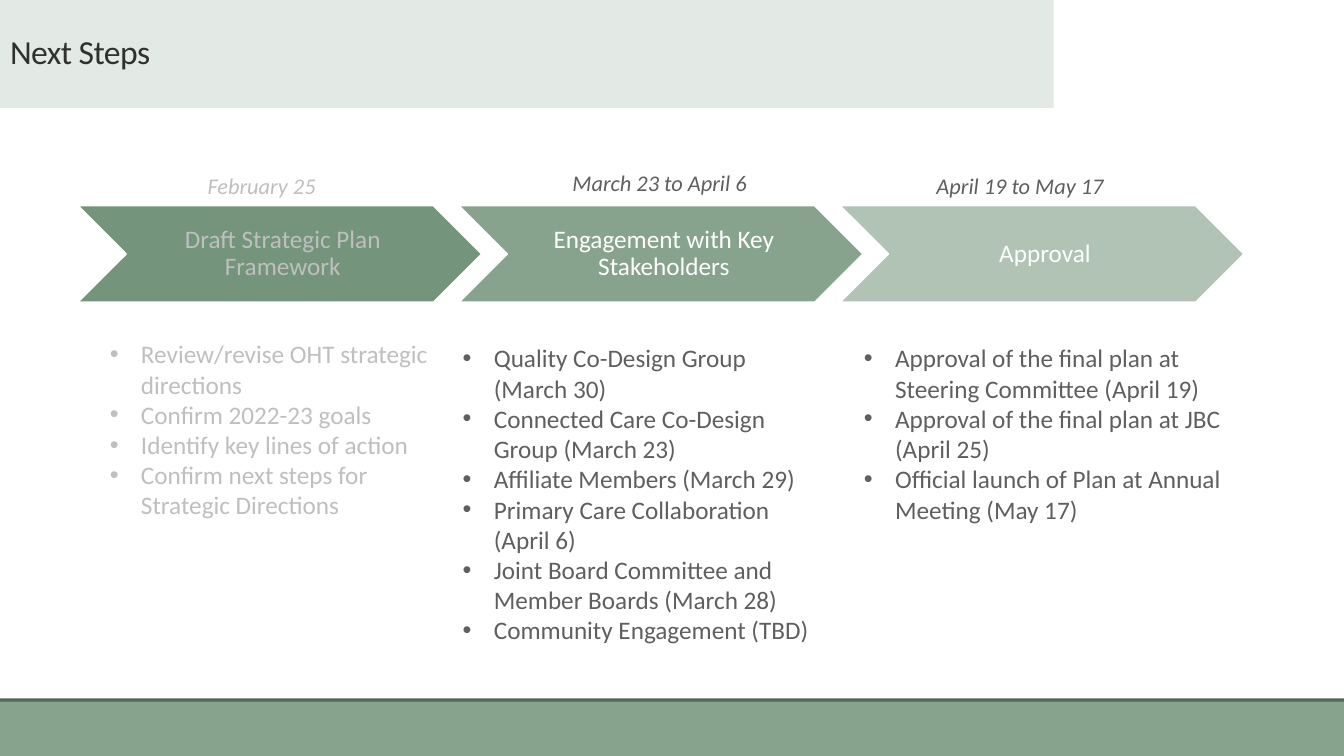
from dataclasses import dataclass

import pptx
import pptx.dml.color
import pptx.enum.shapes
import pptx.enum.text
import pptx.oxml
import pptx.oxml.ns
import pptx.util

Inches = pptx.util.Inches
Pt = pptx.util.Pt
PP_ALIGN = pptx.enum.text.PP_ALIGN
ANCHOR = pptx.enum.text.MSO_ANCHOR
SHAPE = pptx.enum.shapes.MSO_SHAPE

FONT = "Calibri"
WHITE, MUTED, GREY = "FFFFFF", "BFBFBF", "5F5F5F"
CHEVRON_LEFT, CHEVRON_STEP, CHEVRON_TOP = 0.77, 3.78, 2.04
CHEVRON_W, CHEVRON_H = 4.01, 0.96


@dataclass
class Box:
    left: float
    top: float
    width: float
    height: float

    def lengths(self) -> tuple:
        return tuple(Inches(v) for v in (self.left, self.top, self.width, self.height))


@dataclass
class Band:
    box: Box
    fill: str


@dataclass
class Step:
    label: str
    label_color: str
    fill: str
    date: str
    date_box: Box
    tasks: list[str]
    tasks_box: Box
    text_color: str


BANDS = [
    Band(Box(0, 6.93, 13.33, 0.07), "506855"),
    Band(Box(0, 6.96, 13.33, 0.54), "87A38D"),
]

STEPS = [
    Step("Draft Strategic Plan Framework", MUTED, "74947B",
         "February 25", Box(1.96, 1.66, 2.42, 0.37),
         ["Review/revise OHT strategic directions",
          "Confirm 2022-23 goals",
          "Identify key lines of action",
          "Confirm next steps for Strategic Directions"],
         Box(0.99, 3.31, 3.39, 1.92), MUTED),
    Step("Engagement with Key Stakeholders", WHITE, "87A38D",
         "March 23 to April 6", Box(5.58, 1.63, 3.16, 0.37),
         ["Quality Co-Design Group (March 30)",
          "Connected Care Co-Design Group (March 23)",
          "Affiliate Members (March 29)",
          "Primary Care Collaboration (April 6)",
          "Joint Board Committee and Member Boards (March 28)",
          "Community Engagement (TBD)"],
         Box(4.49, 3.35, 3.74, 3.13), GREY),
    Step("Approval", WHITE, "B1C3B5",
         "April 19 to May 17", Box(9.19, 1.66, 3.16, 0.37),
         ["Approval of the final plan at Steering Committee (April 19)",
          "Approval of the final plan at JBC (April 25)",
          "Official launch of Plan at Annual Meeting (May 17)"],
         Box(8.47, 3.35, 3.74, 1.92), GREY),
]


def rgb(color: str) -> pptx.dml.color.RGBColor:
    return pptx.dml.color.RGBColor.from_string(color)


def fill_solid(sp, color: str) -> None:
    sp.fill.solid()
    sp.fill.fore_color.rgb = rgb(color)


def add_filled(s, kind, box: Box, fill: str, line: str | None = None):
    sp = s.shapes.add_shape(kind, *box.lengths())
    sp.shadow.inherit = False
    fill_solid(sp, fill)
    if line:
        sp.line.color.rgb = rgb(line)
        sp.line.width = Pt(1.25)
    else:
        sp.line.fill.background()
    return sp


def add_run(p, text: str, size: float, color: str, italic: bool = False):
    r = p.add_run()
    r.text = text
    r.font.name = FONT
    r.font.size = Pt(size)
    r.font.color.rgb = rgb(color)
    r.font.italic = italic
    return r


def add_text_frame(s, box: Box):
    tf = s.shapes.add_textbox(*box.lengths()).text_frame
    tf.word_wrap = True
    return tf


def add_bullet(p) -> None:
    pPr = p._p.get_or_add_pPr()
    pPr.set("marL", str(Inches(0.31)))
    pPr.set("indent", str(-Inches(0.31)))
    ns = pptx.oxml.ns.nsdecls("a")
    pPr.append(pptx.oxml.parse_xml(f'<a:buFont {ns} typeface="Arial"/>'))
    pPr.append(pptx.oxml.parse_xml(f'<a:buChar {ns} char="•"/>'))


def add_title(s, text: str) -> None:
    sp = s.shapes.title
    sp.left, sp.top, sp.width, sp.height = Box(0, 0, 10.45, 1.07).lengths()
    fill_solid(sp, "E3E9E4")
    tf = sp.text_frame
    tf.auto_size = pptx.enum.text.MSO_AUTO_SIZE.NONE
    tf.vertical_anchor = ANCHOR.MIDDLE
    p = tf.paragraphs[0]
    p.alignment = PP_ALIGN.LEFT
    p.line_spacing = 0.85
    r = add_run(p, text, 24, "303030")
    r.font._element.set("spc", "-40")


def add_step(s, step: Step, index: int) -> None:
    left = CHEVRON_LEFT + index * CHEVRON_STEP
    add_filled(s, SHAPE.CHEVRON, Box(left, CHEVRON_TOP, CHEVRON_W, CHEVRON_H),
               step.fill, WHITE)

    tf = add_text_frame(s, Box(left + 0.48, CHEVRON_TOP, 3.06, CHEVRON_H))
    tf.vertical_anchor = ANCHOR.MIDDLE
    tf.margin_left = Inches(0.08)
    tf.margin_top = tf.margin_right = tf.margin_bottom = Inches(0.03)
    p = tf.paragraphs[0]
    p.alignment = PP_ALIGN.CENTER
    p.line_spacing = 0.9
    add_run(p, step.label, 18, step.label_color)

    tf = add_text_frame(s, step.date_box)
    add_run(tf.paragraphs[0], step.date, 16, step.text_color, italic=True)

    tf = add_text_frame(s, step.tasks_box)
    for i, task in enumerate(step.tasks):
        p = tf.add_paragraph() if i else tf.paragraphs[0]
        add_bullet(p)
        add_run(p, task, 18, step.text_color)


def main() -> None:
    prs = pptx.Presentation()
    prs.slide_width = Inches(13.33)
    prs.slide_height = Inches(7.5)
    s = prs.slides.add_slide(prs.slide_layouts[5])
    add_title(s, "Next Steps")
    for band in BANDS:
        add_filled(s, SHAPE.RECTANGLE, band.box, band.fill)
    for i, step in enumerate(STEPS):
        add_step(s, step, i)
    prs.save("out.pptx")


if __name__ == "__main__":
    main()
